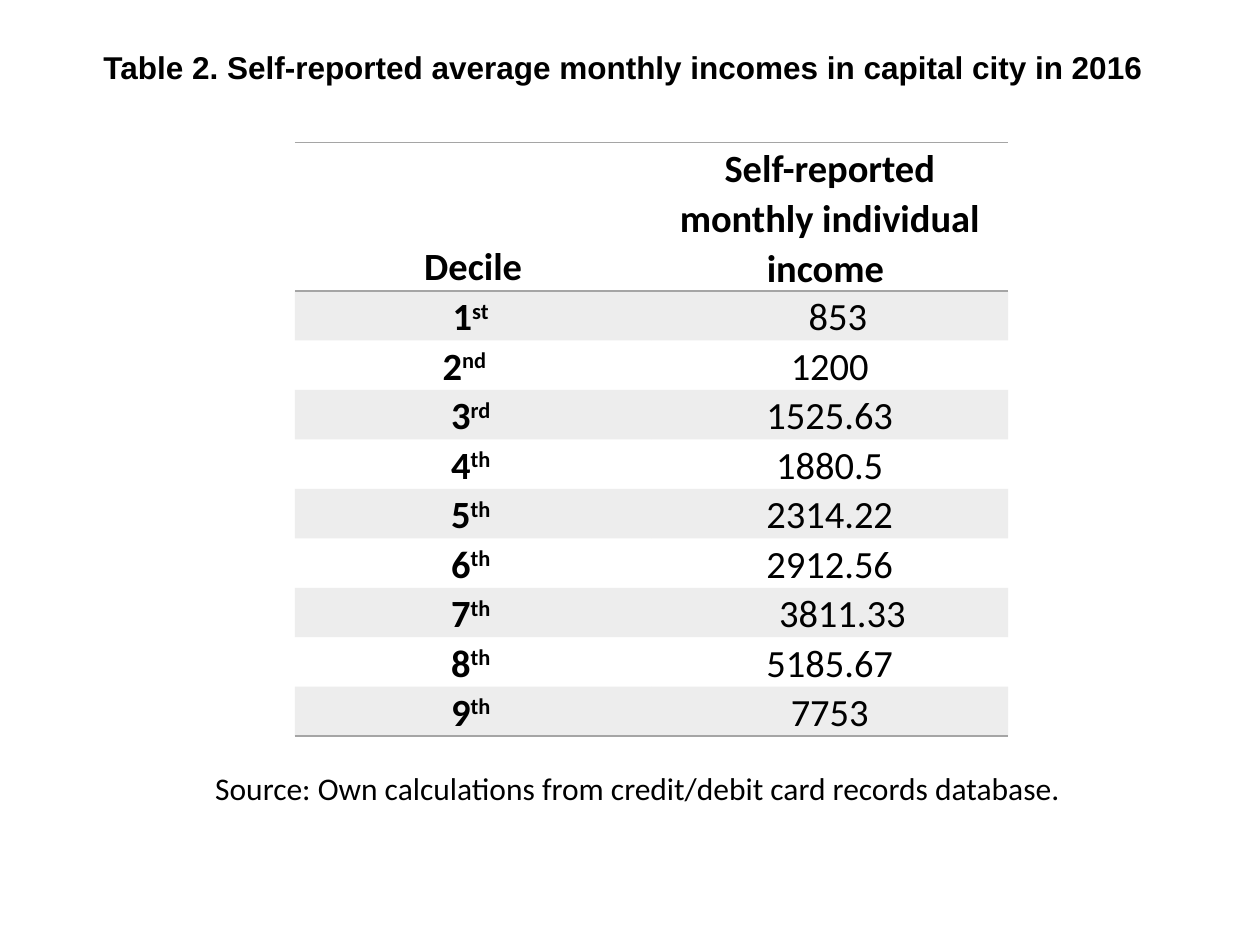
from dataclasses import dataclass
from lxml.etree import SubElement
from pptx import Presentation
from pptx.dml.color import RGBColor
from pptx.enum.text import MSO_ANCHOR, MSO_AUTO_SIZE, PP_ALIGN
from pptx.oxml.ns import qn
from pptx.util import Inches, Pt

BLACK = RGBColor(0, 0, 0)
GRAY = RGBColor(0xA5, 0xA5, 0xA5)
WIDE, HIGH = Inches(10), Inches(7.5)
UNIT = Inches(4.71) / 12
PAD = 0.07
PLAIN = "{2D5ABB26-0587-4C30-8999-92F81FD0307C}"
HEAD_FONT = dict(name="Arial", size=Pt(18), bold=True)
NOTE_FONT = dict(name="Calibri", size=Pt(18), bold=False)
BOLD_FONT = dict(name="Calibri", size=Pt(22), bold=True)
BODY_FONT = dict(name="Calibri", size=Pt(22), bold=False)
LOOSE = dict(line_spacing=1.07, space_after=Pt(8))
MID = dict(alignment=PP_ALIGN.CENTER)


@dataclass
class Label:
    text: str
    left: float
    top: float
    width: float
    height: float
    font: dict
    para: dict


@dataclass
class Entry:
    text: str
    sup: str = ""
    left: float = 0
    right: float = 0


LABELS = [
    Label("Table 2. Self-reported average monthly incomes in capital city in 2016",
          0.022, 0.044, 0.945, 0.053, HEAD_FONT, MID),
    Label("Source: Own calculations from credit/debit card records database.",
          0.161, 0.804, 0.916, 0.057, NOTE_FONT, LOOSE),
]
ROWS = [
    (Entry("Decile"), Entry("Self-reported monthly individual income ")),
    (Entry("1", "st "), Entry("853", left=0.13)),
    (Entry("2", "nd ", right=0.1), Entry("1200")),
    (Entry("3", "rd "), Entry("1525.63")),
    (Entry("4", "th "), Entry("1880.5")),
    (Entry("5", "th "), Entry("2314.22")),
    (Entry("6", "th "), Entry("2912.56")),
    (Entry("7", "th "), Entry("3811.33", left=0.2)),
    (Entry("8", "th "), Entry("5185.67")),
    (Entry("9", "th "), Entry("7753")),
]


def style(item, form: dict) -> None:
    for key, value in form.items():
        setattr(item, key, value)


def write(para, text: str, font: dict):
    run = para.add_run()
    run.text = text
    style(run.font, font)
    run.font.color.rgb = BLACK
    return run


def draw_label(slide, label: Label) -> None:
    box = slide.shapes.add_textbox(
        int(label.left * WIDE), int(label.top * HIGH),
        int(label.width * WIDE), int(label.height * HIGH))
    style(box.text_frame, dict(word_wrap=True, auto_size=MSO_AUTO_SIZE.SHAPE_TO_FIT_TEXT))
    para = box.text_frame.paragraphs[0]
    style(para, label.para)
    write(para, label.text, label.font)


def rule(cell, side: str) -> None:
    line = SubElement(cell._tc.get_or_add_tcPr(), qn(f"a:{side}"), w=str(Pt(1)))
    fill = SubElement(line, qn("a:solidFill"))
    SubElement(fill, qn("a:srgbClr"), val=str(GRAY))


def shade(cell) -> None:
    cell.fill.solid()
    cell.fill.fore_color.rgb = GRAY
    tone = cell._tc.tcPr.find(qn("a:solidFill")).find(qn("a:srgbClr"))
    SubElement(tone, qn("a:alpha"), val="20000")


def draw_cell(cell, entry: Entry, font: dict) -> None:
    style(cell, dict(
        vertical_anchor=MSO_ANCHOR.BOTTOM, margin_top=0, margin_bottom=0,
        margin_left=Inches(PAD + entry.left), margin_right=Inches(PAD + entry.right)))
    para = cell.text_frame.paragraphs[0]
    style(para, LOOSE | MID)
    write(para, entry.text, font)
    if entry.sup:
        run = write(para, entry.sup, font)
        run._r.get_or_add_rPr().set("baseline", "30000")


def draw_table(slide) -> None:
    last = len(ROWS) - 1
    table = slide.shapes.add_table(
        len(ROWS), 2, int(0.234 * WIDE), int(0.151 * HIGH),
        int(0.566 * WIDE), int(12 * UNIT)).table
    style(table, dict(first_row=False, horz_banding=False))
    table._tbl.tblPr.find(qn("a:tableStyleId")).text = PLAIN
    for r, row in enumerate(ROWS):
        table.rows[r].height = int(UNIT * (1 if r else 3))
        for c, entry in enumerate(row):
            cell = table.cell(r, c)
            draw_cell(cell, entry, BODY_FONT if r and c else BOLD_FONT)
            if r == 0:
                rule(cell, "lnT")
            if r in (0, last):
                rule(cell, "lnB")
            if r % 2:
                shade(cell)
            else:
                cell.fill.background()


def main() -> None:
    deck = Presentation()
    style(deck, dict(slide_width=WIDE, slide_height=HIGH))
    slide = deck.slides.add_slide(deck.slide_layouts[6])
    for label in LABELS:
        draw_label(slide, label)
    draw_table(slide)
    deck.save("out.pptx")


if __name__ == "__main__":
    main()
